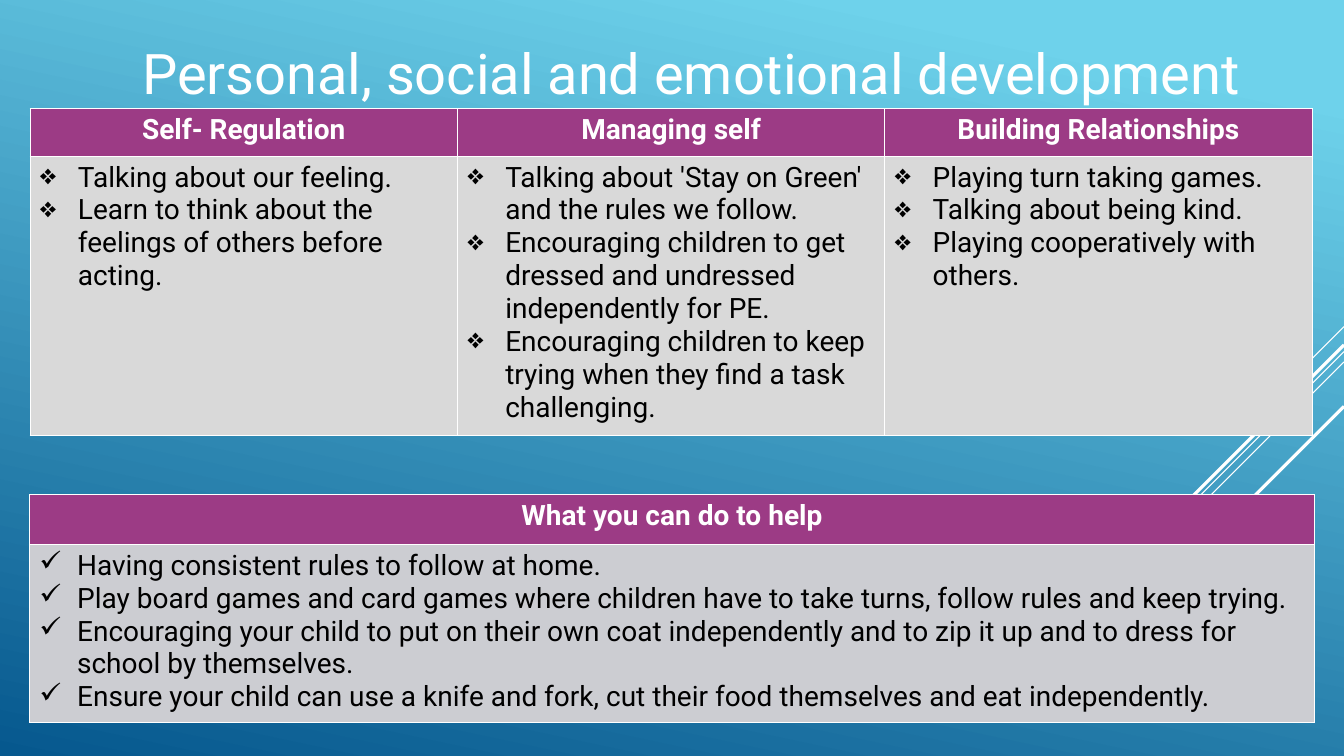
from lxml.etree import SubElement
from pptx import Presentation
from pptx.dml.color import RGBColor
from pptx.enum.shapes import MSO_CONNECTOR
from pptx.enum.text import MSO_ANCHOR, PP_ALIGN
from pptx.oxml import parse_xml
from pptx.oxml.ns import nsdecls, qn
from pptx.util import Cm, Pt


def tint(color, code):
    color.rgb = RGBColor.from_string(code)


def write(para, text, size, code, bold=False):
    run = para.add_run()
    run.text = text
    run.font.name = "Roboto"
    run.font.size = Pt(size)
    run.font.bold = bold
    tint(run.font.color, code)


deck = Presentation()
deck.slide_width, deck.slide_height = Cm(33.87), Cm(19.05)
slide = deck.slides.add_slide(deck.slide_layouts[6])

back = slide.background.fill
back.gradient()
back.gradient_angle = 258
for stop, place, code in zip(back.gradient_stops, (0.1, 1), ("6ED2EB", "06588E")):
    stop.position = place
    tint(stop.color, code)

streaks = [
    (8.23, 2.54, 0.75),
    (8.86, 8.28, 0.75),
    (9.12, 5.27, 0.75),
    (8.69, 4.85, 2.25),
    (10.24, 3.53, 2.25),
]
for top, reach, weight in streaks:
    streak = slide.shapes.add_connector(
        MSO_CONNECTOR.STRAIGHT, Cm(33.87), Cm(top), Cm(33.87 - reach), Cm(top + reach)
    )
    streak.line.width = Pt(weight)
    tint(streak.line.color, "FFFFFF")
    SubElement(streak._element.spPr, qn("a:effectLst"))

title = slide.shapes.add_textbox(Cm(1.5), Cm(0.61), Cm(31.83), Cm(2.41)).text_frame
title.word_wrap = True
title.vertical_anchor = MSO_ANCHOR.MIDDLE
title.paragraphs[0].alignment = PP_ALIGN.CENTER
write(title.paragraphs[0], "Personal, social and emotional development", 40, "FFFFFF")

goals = {
    "Self- Regulation": [
        "Talking about our feeling.",
        "Learn to think about the feelings of others before acting.",
    ],
    "Managing self": [
        "Talking about 'Stay on Green' and the rules we follow.",
        "Encouraging children to get dressed and undressed independently for PE.",
        "Encouraging children to keep trying when they find a task challenging.",
    ],
    "Building Relationships": [
        "Playing turn taking games.",
        "Talking about being kind.",
        "Playing cooperatively with others.",
    ],
}
tips = {
    "What you can do to help": [
        "Having consistent rules to follow at home.",
        "Play board games and card games where children have to take turns, "
        "follow rules and keep trying.",
        "Encouraging your child to put on their own coat independently and to "
        "zip it up and to dress for school by themselves.",
        "Ensure your child can use a knife and fork, cut their food themselves "
        "and eat independently.",
    ],
}
tables = [
    (goals, 0.76, 2.74, 32.31, (1.19, 6.88), "❖", "D9D9D9"),
    (tips, 0.74, 12.47, 32.39, (1.24, 4.47), "✓", "CCCDD2"),
]
for topics, left, top, width, heights, mark, shade in tables:
    grid = slide.shapes.add_table(
        2, len(topics), Cm(left), Cm(top), Cm(width), Cm(sum(heights))
    ).table
    for row, height in zip(grid.rows, heights):
        row.height = Cm(height)
    for col, (topic, items) in enumerate(topics.items()):
        grid.columns[col].width = Cm(width / len(topics))
        head, body = grid.cell(0, col), grid.cell(1, col)
        for cell, code in ((head, "9C3B85"), (body, shade)):
            props = cell._tc.get_or_add_tcPr()
            for side in "LRTB":
                props.append(parse_xml(
                    f'<a:ln{side} {nsdecls("a")} w="9525"><a:solidFill>'
                    f'<a:srgbClr val="FFFFFF"/></a:solidFill></a:ln{side}>'
                ))
            cell.fill.solid()
            tint(cell.fill.fore_color, code)
        para = head.text_frame.paragraphs[0]
        para.alignment = PP_ALIGN.CENTER
        write(para, topic, 20, "FFFFFF", True)
        frame = body.text_frame
        for order, item in enumerate(items):
            para = frame.add_paragraph() if order else frame.paragraphs[0]
            props = para._p.get_or_add_pPr()
            props.set("marL", str(Cm(0.95)))
            props.set("indent", str(-Cm(0.95)))
            SubElement(props, qn("a:buChar")).set("char", mark)
            write(para, item, 20, "000000")

deck.save("out.pptx")
